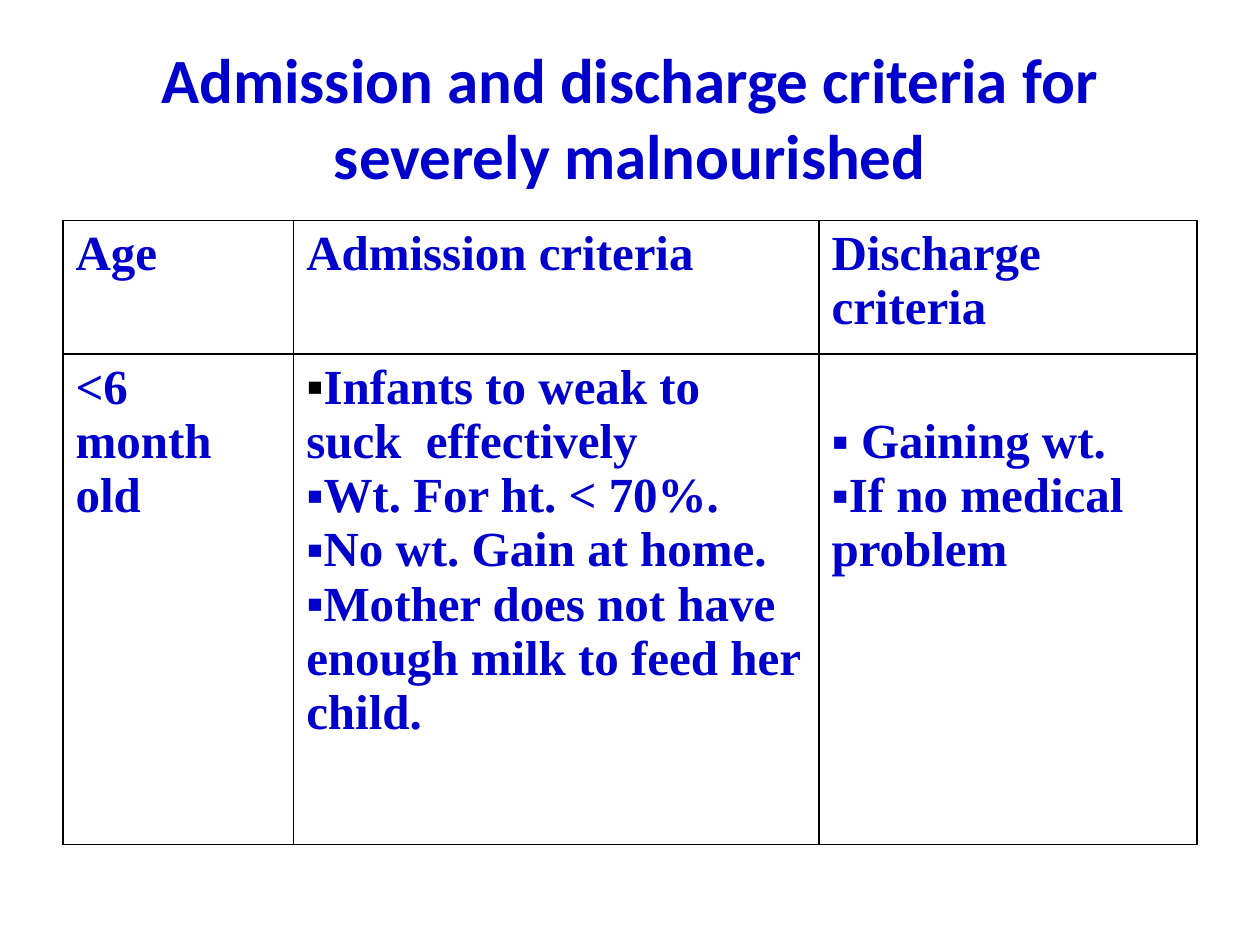
from dataclasses import dataclass

from pptx import Presentation
from pptx.dml.color import RGBColor
from pptx.enum.text import MSO_ANCHOR, PP_ALIGN
from pptx.oxml import parse_xml
from pptx.oxml.ns import nsdecls
from pptx.util import Cm, Pt


@dataclass(frozen=True)
class Theme:
    text: str = "0000CC"
    line: str = "000000"
    title_font: str = "Calibri"
    body_font: str = "Times New Roman"
    title_size: int = 36
    body_size: int = 28
    border_width: int = 1


THEME = Theme()
BULLET = "▪"
TITLE = "Admission and discharge criteria for severely malnourished"
HEADINGS = ["Age", "Admission criteria", "Discharge criteria"]
AGE = "<6  month old"
ADMISSION = [
    "Infants to weak to suck  effectively",
    "Wt. For ht. < 70%.",
    "No wt. Gain at home.",
    "Mother does not have enough milk to feed her child.",
]
DISCHARGE = [" Gaining wt.", "If no medical problem"]
COLUMN_WIDTHS = [4.65, 10.59, 7.62]
ROW_HEIGHTS = [2.69, 9.88]
DISCHARGE_TOP_MARGIN = 1.22


def set_format(target, values):
    for name, value in values.items():
        setattr(target, name, value)


def add_span(para, text, font, size):
    span = para.add_run()
    span.text = text
    set_format(span.font, {"name": font, "size": Pt(size), "bold": True})
    span.font.color.rgb = RGBColor.from_string(THEME.text)


def add_bullet(para, color):
    properties = para._p.get_or_add_pPr()
    set_format(properties, {"marL": 0, "indent": 0})
    for tag in (
        f'<a:buClr {nsdecls("a")}><a:srgbClr val="{color}"/></a:buClr>',
        f'<a:buFont {nsdecls("a")} typeface="{THEME.body_font}"/>',
        f'<a:buChar {nsdecls("a")} char="{BULLET}"/>',
    ):
        properties.append(parse_xml(tag))


def add_title(page):
    box = page.shapes.add_textbox(Cm(1.27), Cm(0.76), Cm(22.86), Cm(3.18))
    frame = box.text_frame
    set_format(frame, {"word_wrap": True, "vertical_anchor": MSO_ANCHOR.MIDDLE})
    para = frame.paragraphs[0]
    para.alignment = PP_ALIGN.CENTER
    add_span(para, TITLE, THEME.title_font, THEME.title_size)


def style_cell(cell):
    properties = cell._tc.get_or_add_tcPr()
    for side in "LRTB":
        properties.append(parse_xml(
            f'<a:ln{side} {nsdecls("a")} w="{Pt(THEME.border_width)}"><a:solidFill>'
            f'<a:srgbClr val="{THEME.line}"/></a:solidFill></a:ln{side}>'
        ))
    cell.fill.background()


def fill_cell(cell, lines, bullet_colors=()):
    """Write one paragraph per line, bulleted where a bullet colour is given."""
    frame = cell.text_frame
    for index, line in enumerate(lines):
        para = frame.add_paragraph() if index else frame.paragraphs[0]
        if index < len(bullet_colors):
            add_bullet(para, bullet_colors[index])
        add_span(para, line, THEME.body_font, THEME.body_size)


def add_criteria_table(page):
    table = page.shapes.add_table(
        len(ROW_HEIGHTS), len(COLUMN_WIDTHS), Cm(1.27), Cm(4.45),
        Cm(sum(COLUMN_WIDTHS)), Cm(sum(ROW_HEIGHTS)),
    ).table
    set_format(table, {"first_row": False, "horz_banding": False})
    for column, width in zip(table.columns, COLUMN_WIDTHS):
        column.width = Cm(width)
    for row, height in zip(table.rows, ROW_HEIGHTS):
        row.height = Cm(height)
    for cell in table.iter_cells():
        style_cell(cell)

    for index, heading in enumerate(HEADINGS):
        fill_cell(table.cell(0, index), [heading])
    fill_cell(table.cell(1, 0), [AGE])
    fill_cell(table.cell(1, 1), ADMISSION, [THEME.line] + [THEME.text] * 3)
    fill_cell(table.cell(1, 2), DISCHARGE, [THEME.text] * 2)
    table.cell(1, 2).margin_top = Cm(DISCHARGE_TOP_MARGIN)


def main():
    deck = Presentation()
    set_format(deck, {"slide_width": Cm(25.4), "slide_height": Cm(19.05)})
    page = deck.slides.add_slide(deck.slide_layouts[6])
    add_title(page)
    add_criteria_table(page)
    deck.save("out.pptx")


if __name__ == "__main__":
    main()
